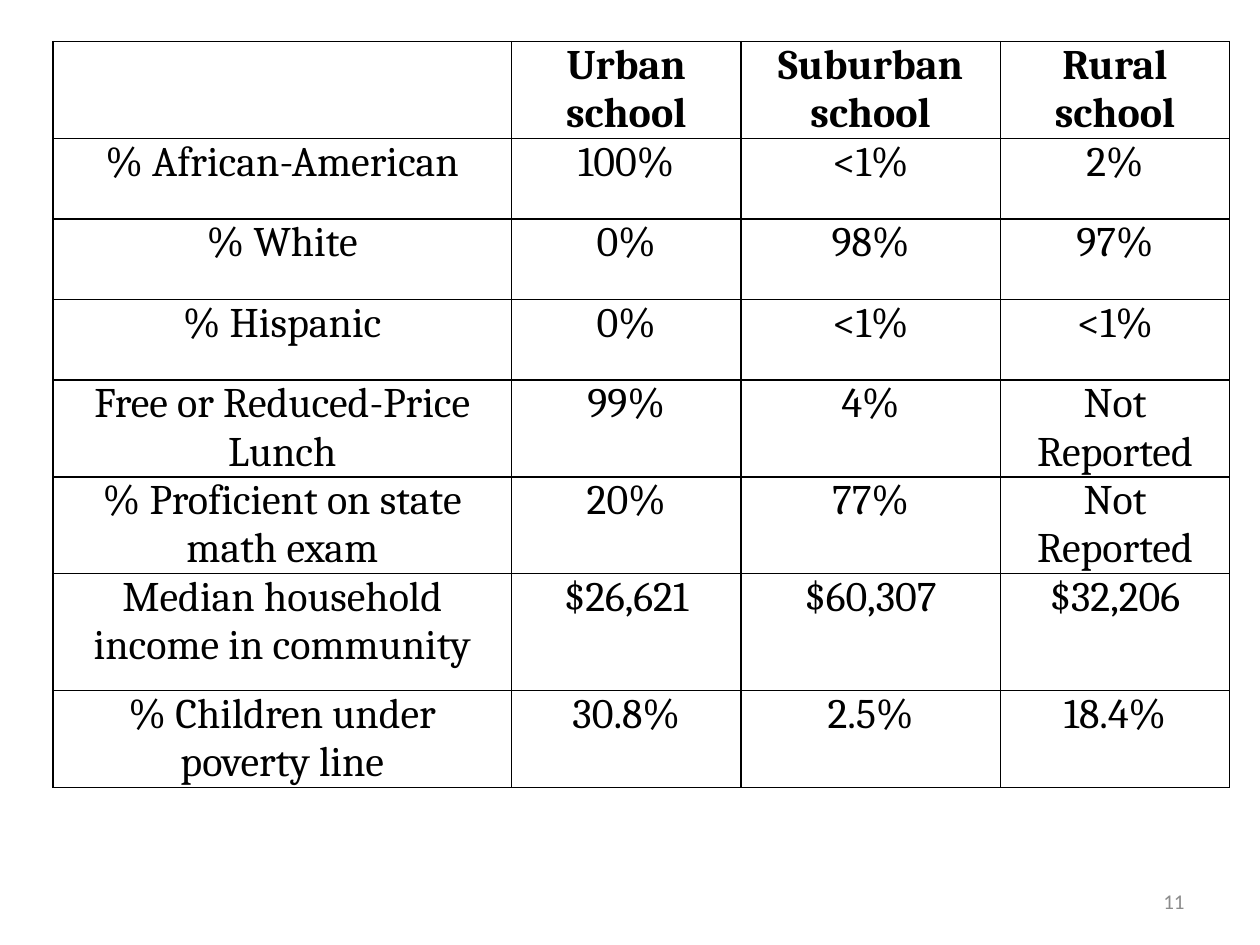
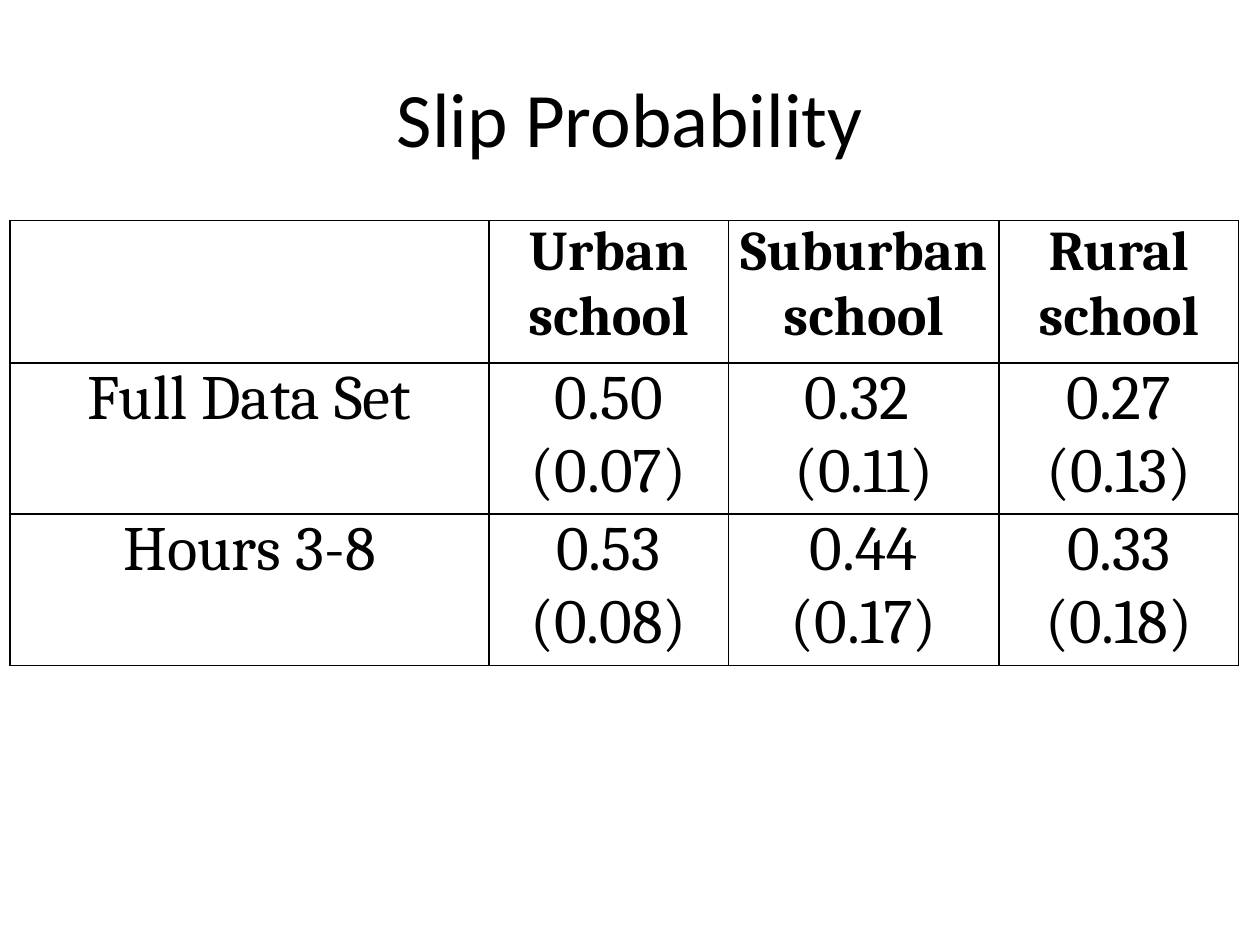
from dataclasses import dataclass

import lxml.etree
import pptx
import pptx.dml.color
import pptx.enum.text
import pptx.oxml.ns
import pptx.util

COLORS = {"ink": "000000", "paper": "FFFFFF", "number": "8C8C8C"}
GRID_COLUMNS, GRID_ROWS = 100, 75
SLIDE_WIDTH, SLIDE_HEIGHT = pptx.util.Inches(10), pptx.util.Inches(7.5)
HEADER = ("", "Urban school", "Suburban school", "Rural school")
ALIGN = pptx.enum.text.PP_ALIGN


@dataclass(frozen=True)
class TextStyle:
    size: float
    font: str
    color: str = "ink"
    bold: bool = False
    align: ALIGN = ALIGN.CENTER


@dataclass(frozen=True)
class Label:
    text: str
    left: float
    top: float
    width: float
    height: float
    style: TextStyle


@dataclass(frozen=True)
class SchoolTable:
    left: float
    top: float
    columns: tuple[float, ...]
    rows: tuple[float, ...]
    header_size: float
    body_size: float
    body: tuple[tuple[str, ...], ...]


TITLE = TextStyle(44, "Calibri")
PAGE_NUMBER = TextStyle(12, "Calibri", "number", align=ALIGN.RIGHT)

DEMOGRAPHICS = SchoolTable(
    4.2, 3.3, (36.4, 18.2, 20.6, 18.2), (7.1, *[6.4] * 5, 9.3, 6.4), 24, 24,
    (
        ("% African-American", "100%", "<1%", "2%"),
        ("% White", "0%", "98%", "97%"),
        ("% Hispanic", "0%", "<1%", "<1%"),
        ("Free or Reduced-Price Lunch", "99%", "4%", "Not Reported"),
        ("% Proficient on state math exam", "20%", "77%", "Not Reported"),
        ("Median household income in community", "$26,621", "$60,307", "$32,206"),
        ("% Children under poverty line", "30.8%", "2.5%", "18.4%"),
    ),
)
SLIP = SchoolTable(
    0.8, 17.5, (38, 19, 21.5, 19), (11.3, 10.1, 10.1), 32, 36,
    (
        ("Full Data Set", "0.50 (0.07)", "0.32 \v(0.11)", "0.27 (0.13)"),
        ("Hours 3-8", "0.53 (0.08)", "0.44 (0.17)", "0.33 (0.18)"),
    ),
)
PAGES = (
    (DEMOGRAPHICS, Label("11", 71.7, 69.5, 23.3, 4, PAGE_NUMBER)),
    (SLIP, Label("Slip Probability", 5, 3, 90, 12.5, TITLE)),
)


def across(columns: float) -> int:
    return round(SLIDE_WIDTH * columns / GRID_COLUMNS)


def down(rows: float) -> int:
    return round(SLIDE_HEIGHT * rows / GRID_ROWS)


def rgb(name: str) -> pptx.dml.color.RGBColor:
    return pptx.dml.color.RGBColor.from_string(COLORS[name])


def write(para, text: str, style: TextStyle) -> None:
    para.text = text
    para.alignment = style.align
    para.font.size = pptx.util.Pt(style.size)
    for span in para.runs:
        span.font.size = pptx.util.Pt(style.size)
        span.font.name = style.font
        span.font.bold = style.bold
        span.font.color.rgb = rgb(style.color)


def draw_label(page, label: Label) -> None:
    box = page.shapes.add_textbox(
        across(label.left), down(label.top), across(label.width), down(label.height)
    )
    box.text_frame.word_wrap = True
    box.text_frame.vertical_anchor = pptx.enum.text.MSO_ANCHOR.MIDDLE
    write(box.text_frame.paragraphs[0], label.text, label.style)


def outline(cell) -> None:
    properties = cell._tc.get_or_add_tcPr()
    name = pptx.oxml.ns.qn
    for side in ("lnL", "lnR", "lnT", "lnB"):
        line = lxml.etree.SubElement(properties, name(f"a:{side}"), w=str(pptx.util.Pt(1)))
        fill = lxml.etree.SubElement(line, name("a:solidFill"))
        lxml.etree.SubElement(fill, name("a:srgbClr"), val=COLORS["ink"])


def draw_table(page, layout: SchoolTable) -> None:
    table = page.shapes.add_table(
        len(layout.rows), len(layout.columns), across(layout.left), down(layout.top),
        across(sum(layout.columns)), down(sum(layout.rows)),
    ).table
    table.first_row = table.horz_banding = False
    for column, width in zip(table.columns, layout.columns):
        column.width = across(width)
    for row, height in zip(table.rows, layout.rows):
        row.height = down(height)
    header_style = TextStyle(layout.header_size, "Cambria", bold=True)
    body_style = TextStyle(layout.body_size, "Cambria")
    for row_index, texts in enumerate((HEADER, *layout.body)):
        style = body_style if row_index else header_style
        for column_index, text in enumerate(texts):
            cell = table.cell(row_index, column_index)
            cell.margin_left = cell.margin_right = across(0.7)
            cell.margin_top = cell.margin_bottom = 0
            outline(cell)
            cell.fill.solid()
            cell.fill.fore_color.rgb = rgb("paper")
            write(cell.text_frame.paragraphs[0], text, style)


def main() -> None:
    deck = pptx.Presentation()
    deck.slide_width, deck.slide_height = SLIDE_WIDTH, SLIDE_HEIGHT
    for table, label in PAGES:
        page = deck.slides.add_slide(deck.slide_layouts[6])
        draw_table(page, table)
        draw_label(page, label)
    deck.save("out.pptx")


if __name__ == "__main__":
    main()
